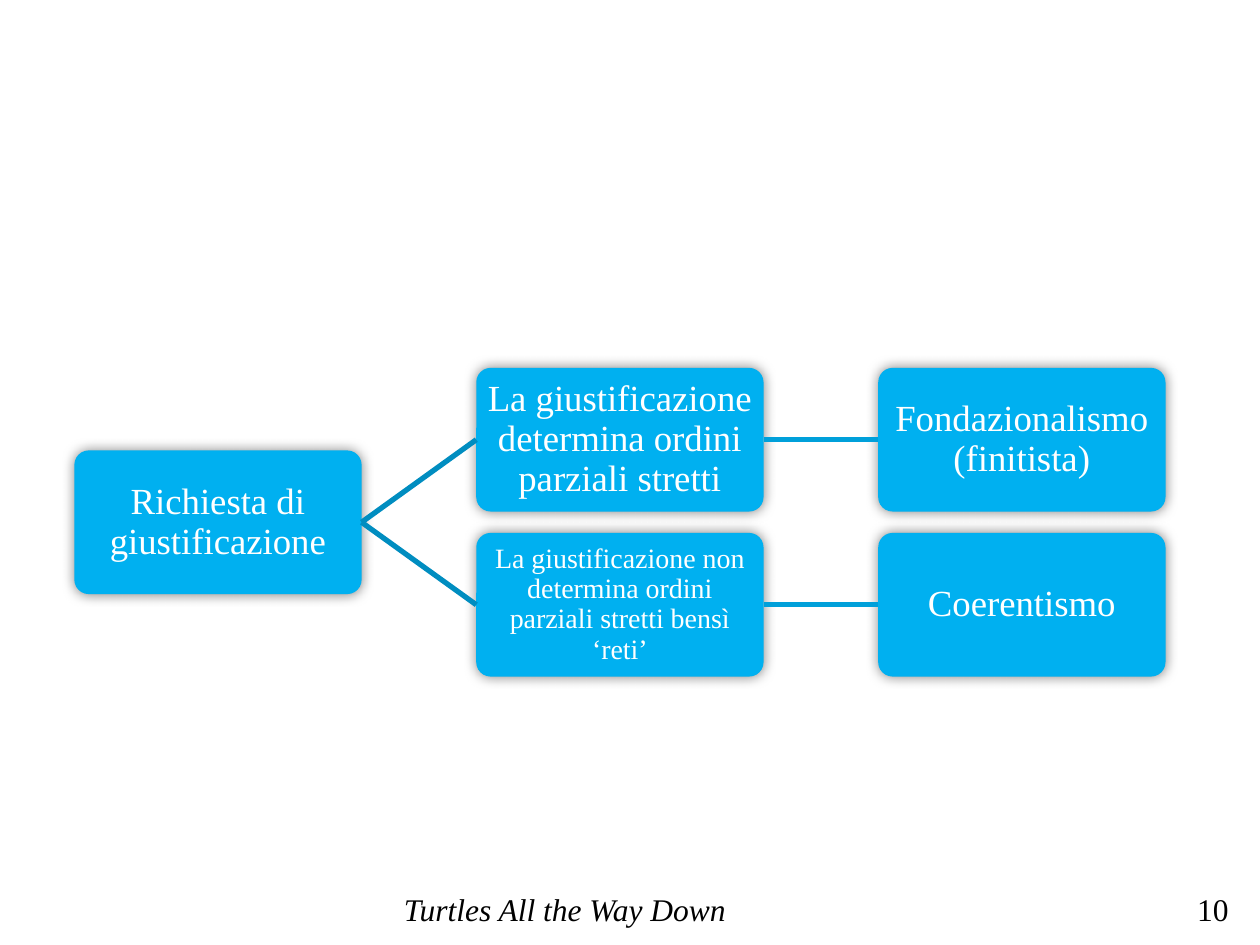
"""Build a slide with a tree of views on justification."""
import dataclasses

import lxml.etree
import pptx
import pptx.dml.color
import pptx.enum.shapes
import pptx.enum.text
import pptx.oxml.ns
import pptx.util

Inches = pptx.util.Inches
Align = pptx.enum.text.PP_ALIGN
Anchor = pptx.enum.text.MSO_ANCHOR


@dataclasses.dataclass(frozen=True)
class Theme:
    """Colours, font and type sizes."""
    font: str = "Times New Roman"
    box: str = "00B0F0"
    fork: str = "008DC0"
    link: str = "00A0DA"
    light: str = "FFFFFF"
    dark: str = "000000"
    large: int = 21
    small: int = 16
    foot: int = 18
    line: int = 3


@dataclasses.dataclass(frozen=True)
class Grid:
    """Origin, cell size and pitch of the tree, in inches."""
    left: float = 0.59
    top: float = 2.92
    wide: float = 2.28
    high: float = 1.14
    col: float = 3.19
    row: float = 1.31

    def place(self, col, row):
        """Return left, top, width and height of a cell."""
        spot = (self.left + col * self.col, self.top + row * self.row,
                self.wide, self.high)
        return [Inches(size) for size in spot]


THEME = Theme()
GRID = Grid()


def paint(code):
    """Return a colour from its hex code."""
    return pptx.dml.color.RGBColor.from_string(code)


def add_run(para, text, size, tint, slant=False):
    """Add one styled run to a paragraph."""
    run = para.add_run()
    run.text = text
    run.font.name = THEME.font
    run.font.size = pptx.util.Pt(size)
    run.font.color.rgb = paint(tint)
    run.font.italic = slant


def add_glow(shape):
    """Give a shape a soft, centred shadow."""
    qn = pptx.oxml.ns.qn
    shape.shadow.inherit = False
    group = shape.element.spPr.find(qn("a:effectLst"))
    shade = lxml.etree.SubElement(group, qn("a:outerShdw"), blurRad="95250",
                                  dist="0", dir="0", rotWithShape="0")
    tint = lxml.etree.SubElement(shade, qn("a:srgbClr"), val=THEME.dark)
    lxml.etree.SubElement(tint, qn("a:alpha"), val="50000")


def add_box(slide, col, row, text, size=THEME.large):
    """Add a rounded box with centred text in a grid cell."""
    kind = pptx.enum.shapes.MSO_SHAPE.ROUNDED_RECTANGLE
    box = slide.shapes.add_shape(kind, *GRID.place(col, row))
    box.adjustments[0] = 0.1
    box.fill.solid()
    box.fill.fore_color.rgb = paint(THEME.box)
    box.line.fill.background()
    add_glow(box)
    frame = box.text_frame
    frame.word_wrap = True
    frame.vertical_anchor = Anchor.MIDDLE
    frame.margin_left = frame.margin_right = Inches(0.05)
    frame.margin_top = frame.margin_bottom = Inches(0.05)
    para = frame.paragraphs[0]
    para.alignment = Align.CENTER
    para.line_spacing = 0.9
    add_run(para, text, size, THEME.light)
    return box


def add_link(slide, start, end, tint):
    """Join the right side of one box to the left side of another."""
    kind = pptx.enum.shapes.MSO_CONNECTOR.STRAIGHT
    link = slide.shapes.add_connector(kind, 0, 0, 0, 0)
    link.begin_connect(start, 3)
    link.end_connect(end, 1)
    link.line.color.rgb = paint(tint)
    link.line.width = pptx.util.Pt(THEME.line)
    lxml.etree.SubElement(link.element.spPr,
                          pptx.oxml.ns.qn("a:effectLst"))


def add_foot(slide, spot, text, slant=False):
    """Add a right-aligned text at the foot of the slide."""
    sizes = [Inches(size) for size in spot]
    frame = slide.shapes.add_textbox(*sizes).text_frame
    frame.word_wrap = True
    frame.vertical_anchor = Anchor.BOTTOM
    para = frame.paragraphs[0]
    para.alignment = Align.RIGHT
    add_run(para, text, THEME.foot, THEME.dark, slant)


def main():
    """Build the slide and save it."""
    deck = pptx.Presentation()
    deck.slide_width, deck.slide_height = Inches(10), Inches(7.5)
    slide = deck.slides.add_slide(deck.slide_layouts[6])
    root = add_box(slide, 0, 0.5, "Richiesta di giustificazione")
    rows = [
        ("La giustificazione determina ordini parziali stretti",
         THEME.large, "Fondazionalismo (finitista)"),
        ("La giustificazione non determina ordini parziali stretti "
         "bensì ‘reti’", THEME.small, "Coerentismo"),
    ]
    for row, (claim, size, view) in enumerate(rows):
        mid = add_box(slide, 1, row, claim, size)
        leaf = add_box(slide, 2, row, view)
        add_link(slide, root, mid, THEME.fork)
        add_link(slide, mid, leaf, THEME.link)
    add_foot(slide, (0.43, 7.06, 5.43, 0.35), "Turtles All the Way Down", True)
    add_foot(slide, (9.17, 6.98, 0.68, 0.43), "10")
    deck.save("out.pptx")


if __name__ == "__main__":
    main()
